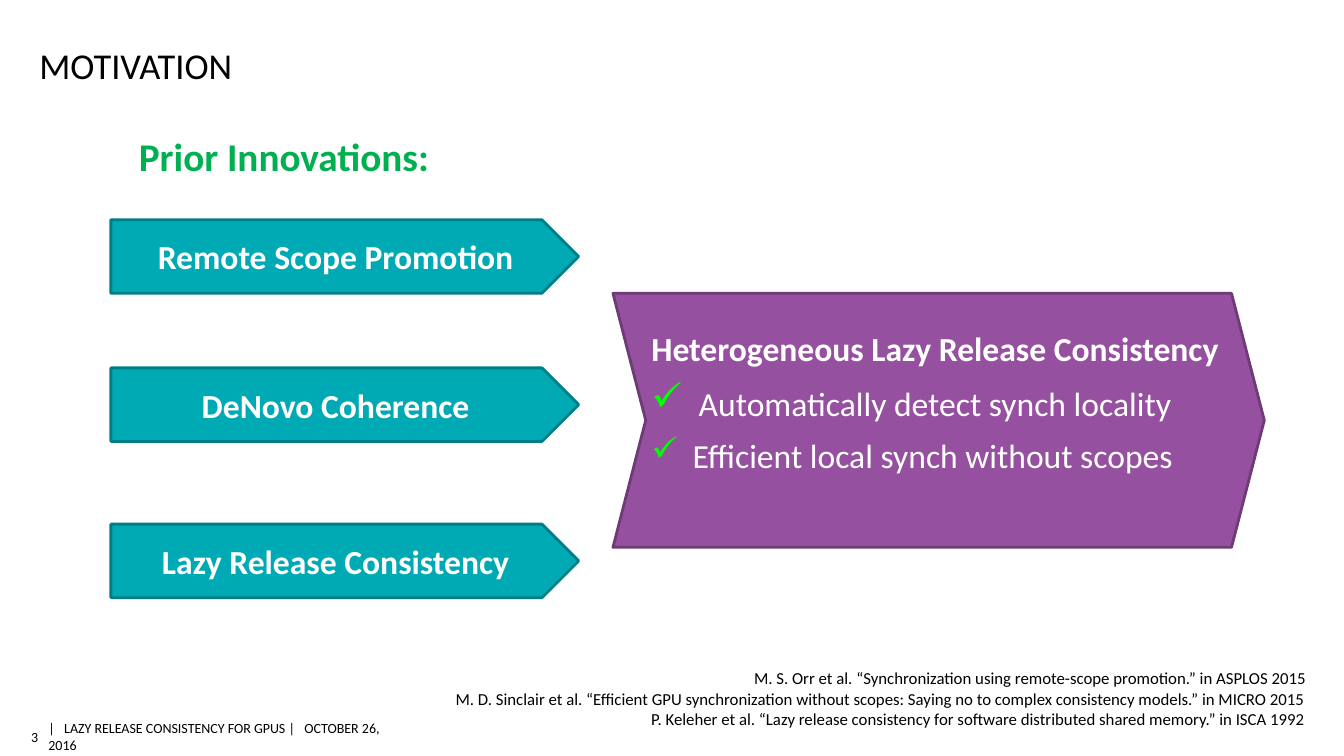
from dataclasses import dataclass

from lxml import etree
from pptx import Presentation
from pptx.dml.color import RGBColor
from pptx.enum.shapes import MSO_SHAPE
from pptx.enum.text import MSO_ANCHOR, PP_ALIGN
from pptx.oxml.ns import qn
from pptx.util import Inches, Pt

PENTAGON, CHEVRON = MSO_SHAPE.PENTAGON, MSO_SHAPE.CHEVRON
TOP, MIDDLE, BOTTOM = MSO_ANCHOR.TOP, MSO_ANCHOR.MIDDLE, MSO_ANCHOR.BOTTOM
LEFT, CENTER, RIGHT = PP_ALIGN.LEFT, PP_ALIGN.CENTER, PP_ALIGN.RIGHT


@dataclass(frozen=True)
class Theme:
    font: str = "Calibri"
    black: str = "000000"
    white: str = "FFFFFF"
    green: str = "00B050"
    check: str = "00FF00"
    teal: str = "00AAB5"
    teal_line: str = "007E86"
    purple: str = "9650A0"
    purple_line: str = "6F3B76"
    title: int = 26
    heading: int = 28
    body: int = 24
    reference: int = 12
    footer: int = 10


T = Theme()

INNOVATIONS = [
    ("Remote Scope Promotion", 2.18),
    ("DeNovo Coherence", 3.65),
    ("Lazy Release Consistency", 5.2),
]
# text, indent in inches, check mark size in percent, space before in points
BENEFITS = [
    ("Automatically detect synch locality", 0.47, 117, 11),
    ("Efficient local synch without scopes", 0.41, 100, 8),
]
# text, left and width in inches
REFERENCES = [
    ("M. S. Orr et al. “Synchronization using remote-scope promotion.” "
     "in ASPLOS 2015", 7.38, 5.85),
    ("M. D. Sinclair et al. “Efficient GPU synchronization without scopes: "
     "Saying no to complex consistency models.” in MICRO 2015", 4.42, 8.83),
    ("P. Keleher et al. “Lazy release consistency for software distributed "
     "shared memory.” in ISCA 1992", 6.36, 6.93),
]


def write(p, text, size=T.body, color=T.white, bold=False, align=LEFT,
          before=0, line=None):
    p.alignment = align
    p.space_before = Pt(before)
    if line:
        p.line_spacing = line
    r = p.add_run()
    r.text = text
    r.font.name = T.font
    r.font.size = Pt(size)
    r.font.bold = bold
    r.font.color.rgb = RGBColor.from_string(color)


def set_frame(tf, anchor=MIDDLE, insets=(0.1, 0.05, 0.1, 0.05)):
    tf.word_wrap = True
    tf.vertical_anchor = anchor
    tf.margin_left, tf.margin_top, tf.margin_right, tf.margin_bottom = map(Inches, insets)
    return tf.paragraphs[0]


def add_text(s, box, text, anchor=MIDDLE, insets=(0.1, 0.05, 0.1, 0.05), **fmt):
    tf = s.shapes.add_textbox(*map(Inches, box)).text_frame
    write(set_frame(tf, anchor, insets), text, **fmt)
    return tf


def add_arrow(s, kind, box, fill, line):
    sp = s.shapes.add_shape(kind, *map(Inches, box))
    sp.shadow.inherit = False
    sp.fill.solid()
    sp.fill.fore_color.rgb = RGBColor.from_string(fill)
    sp.line.color.rgb = RGBColor.from_string(line)
    sp.line.width = Pt(2)
    return sp


def add_check(p, indent, percent):
    pPr = p._p.get_or_add_pPr()
    pPr.set("marL", str(Inches(indent)))
    pPr.set("indent", str(-Inches(indent)))
    color = etree.SubElement(pPr, qn("a:buClr"))
    etree.SubElement(color, qn("a:srgbClr"), val=T.check)
    etree.SubElement(pPr, qn("a:buSzPct"), val=str(percent * 1000))
    etree.SubElement(pPr, qn("a:buChar"), char="✓")


def add_innovations(s, left, width, height):
    add_text(s, (left + 0.18, 1.31, 3.96, 0.53), "Prior Innovations:",
             size=T.heading, color=T.green, bold=True, line=0.9)
    for name, top in INNOVATIONS:
        sp = add_arrow(s, PENTAGON, (left, top, width, height), T.teal, T.teal_line)
        write(set_frame(sp.text_frame), name, bold=True, align=CENTER)


def add_result(s, left, top, width, height):
    sp = add_arrow(s, CHEVRON, (left, top, width, height), T.purple, T.purple_line)
    sp.adjustments[0] = 0.129
    tf = add_text(s, (left + 0.38, top + 0.29, 6.29, 1.96),
                  "Heterogeneous Lazy Release Consistency",
                  anchor=TOP, insets=(0, 0.05, 0, 0.05), bold=True)
    for text, indent, percent, before in BENEFITS:
        p = tf.add_paragraph()
        add_check(p, indent, percent)
        write(p, text, before=before)


def add_references(s, top, pitch):
    for i, (text, left, width) in enumerate(REFERENCES):
        add_text(s, (left, top + i * pitch, width, 0.28), text,
                 size=T.reference, color=T.black, line=0.9)


def add_footer(s, top, height):
    fmt = dict(insets=(0, 0.04, 0, 0.04), size=T.footer, color=T.black)
    add_text(s, (0.22, top, 0.16, height), "3", align=RIGHT, **fmt)
    add_text(s, (0.48, top, 3.46, height),
             "|   LAZY RELEASE CONSISTENCY FOR GPUS |   OCTOBER 26, 2016", **fmt)


def main():
    prs = Presentation()
    prs.slide_width, prs.slide_height = Inches(13.33), Inches(7.5)
    s = prs.slides.add_slide(prs.slide_layouts[6])

    # Title
    add_text(s, (0.39, 0.34, 11.2, 0.52), "MOTIVATION", anchor=BOTTOM,
             insets=(0, 0.05, 0, 0), size=T.title, color=T.black)
    # Prior work leading to the new approach
    add_innovations(s, 1.1, 4.64, 0.73)
    add_result(s, 6.08, 2.91, 6.46, 2.52)
    # Sources and footer
    add_references(s, 6.6, 0.2)
    add_footer(s, 7.18, 0.26)

    prs.save("out.pptx")


if __name__ == "__main__":
    main()
